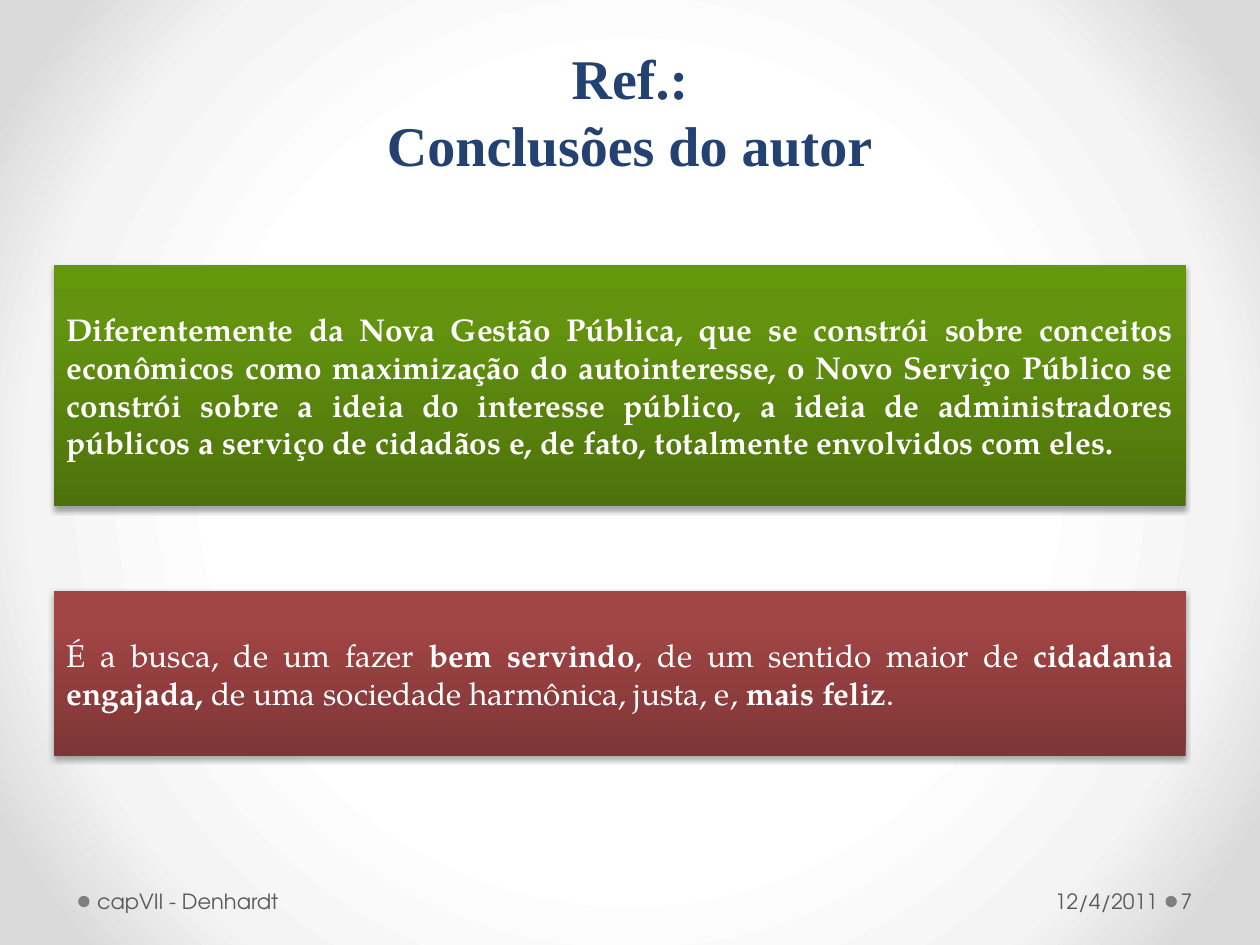
from pptx import Presentation
from pptx.dml.color import RGBColor
from pptx.enum.shapes import MSO_SHAPE
from pptx.enum.text import MSO_ANCHOR, PP_ALIGN
from pptx.oxml import parse_xml
from pptx.oxml.ns import nsdecls, qn
from pptx.util import Inches, Pt

RECTANGLE, OVAL = MSO_SHAPE.RECTANGLE, MSO_SHAPE.OVAL
MIDDLE = MSO_ANCHOR.MIDDLE
LEFT, CENTER, RIGHT, JUSTIFY = PP_ALIGN.LEFT, PP_ALIGN.CENTER, PP_ALIGN.RIGHT, PP_ALIGN.JUSTIFY


def gradient_xml(stops, direction):
    stop_xml = "".join(
        f'<a:gs pos="{position * 1000}"><a:srgbClr val="{color}"/></a:gs>'
        for position, color in stops
    )
    return f'<a:gradFill {nsdecls("a")} rotWithShape="1"><a:gsLst>{stop_xml}</a:gsLst>{direction}</a:gradFill>'


def add_run(paragraph, text, font_name, size, color, bold=False):
    run = paragraph.add_run()
    run.text = text
    font_format = {"name": font_name, "size": Pt(size), "bold": bold}
    for name, value in font_format.items():
        setattr(run.font, name, value)
    run.font.color.rgb = RGBColor.from_string(color)


presentation = Presentation()
presentation.slide_width = Inches(10)
presentation.slide_height = Inches(7.5)
slide = presentation.slides.add_slide(presentation.slide_layouts[5])

# Radial background
background_gradient = gradient_xml(
    [(50, "FFFFFF"), (76, "F4F4F4"), (92, "DADADA")],
    '<a:path path="circle"><a:fillToRect l="50000" t="50000" r="50000" b="50000"/></a:path>',
)
slide.element.cSld.insert(0, parse_xml(
    f'<p:bg {nsdecls("p", "a")}><p:bgPr>{background_gradient}<a:effectLst/></p:bgPr></p:bg>'
))

# Footer dots
for left in (9.25, 0.62):
    dot = slide.shapes.add_shape(OVAL, Inches(left), Inches(7.11), Inches(0.09), Inches(0.09))
    dot.shadow.inherit = False
    dot.fill.solid()
    dot.fill.fore_color.rgb = RGBColor.from_string("808080")
    dot.line.fill.background()

# Footer texts: text, left, width, left inset, right inset, alignment
footers = [
    ("12/4/2011", 6.96, 2.28, 0.1, 0.05, RIGHT),
    ("capVII - Denhardt", 0.72, 3.11, 0.05, 0.1, LEFT),
    ("7", 9.34, 0.61, 0.03, 0.05, LEFT),
]
for text, left, width, left_inset, right_inset, alignment in footers:
    footer = slide.shapes.add_textbox(Inches(left), Inches(6.95), Inches(width), Inches(0.4))
    frame_format = {
        "word_wrap": True,
        "vertical_anchor": MIDDLE,
        "margin_left": Inches(left_inset),
        "margin_right": Inches(right_inset),
    }
    for name, value in frame_format.items():
        setattr(footer.text_frame, name, value)
    paragraph = footer.text_frame.paragraphs[0]
    paragraph.alignment = alignment
    add_run(paragraph, text, "TeX Gyre Adventor", 12, "595959")

# Title
title = slide.shapes.title
title_place = {"left": 2.48, "top": 0.29, "width": 5.04, "height": 1.18}
for name, value in title_place.items():
    setattr(title, name, Inches(value))
title.text_frame.word_wrap = True
title.text_frame.vertical_anchor = MIDDLE
for index, text in enumerate(["Ref.:", "Conclusões do autor"]):
    paragraph = title.text_frame.paragraphs[0] if index == 0 else title.text_frame.add_paragraph()
    paragraph.alignment = CENTER
    add_run(paragraph, text, "Times New Roman", 32, "234271", True)

# Conclusion boxes: top, height, gradient from the bottom up, (text, bold) runs
boxes = [
    (2.1, 1.92, [(0, "4D720B"), (80, "64940F"), (100, "65970C")], [
        ("Diferentemente da Nova Gestão Pública, que se constrói sobre conceitos econômicos "
         "como maximização do autointeresse, o Novo Serviço Público se constrói sobre a ideia "
         "do interesse público, a ideia de administradores públicos a serviço de cidadãos e, "
         "de fato, totalmente envolvidos com eles.", True),
    ]),
    (4.69, 1.31, [(0, "7D3535"), (80, "A24545"), (100, "A44343")], [
        ("É a busca, de um fazer ", False),
        ("bem servindo", True),
        (", de um sentido maior de ", False),
        ("cidadania engajada, ", True),
        ("de uma sociedade harmônica, justa, e, ", False),
        ("mais feliz", True),
        (".", False),
    ]),
]
for top, height, stops, runs in boxes:
    box = slide.shapes.add_shape(RECTANGLE, Inches(0.43), Inches(top), Inches(8.98), Inches(height))
    box.line.fill.background()
    box.fill.gradient()
    properties = box.element.spPr
    properties.replace(
        properties.find(qn("a:gradFill")),
        parse_xml(gradient_xml(stops, '<a:lin ang="16200000" scaled="0"/>')),
    )
    # Soft shadow below the box
    box.shadow.inherit = False
    properties.find(qn("a:effectLst")).append(parse_xml(
        f'<a:outerShdw {nsdecls("a")} blurRad="{Pt(3.1)}" dist="{Pt(1.8)}" dir="5400000" rotWithShape="0">'
        '<a:srgbClr val="000000"><a:alpha val="35000"/></a:srgbClr></a:outerShdw>'
    ))
    box.text_frame.word_wrap = True
    box.text_frame.vertical_anchor = MIDDLE
    paragraph = box.text_frame.paragraphs[0]
    paragraph.alignment = JUSTIFY
    for text, bold in runs:
        add_run(paragraph, text, "TeX Gyre Pagella", 18, "FFFFFF", bold)

presentation.save("out.pptx")
